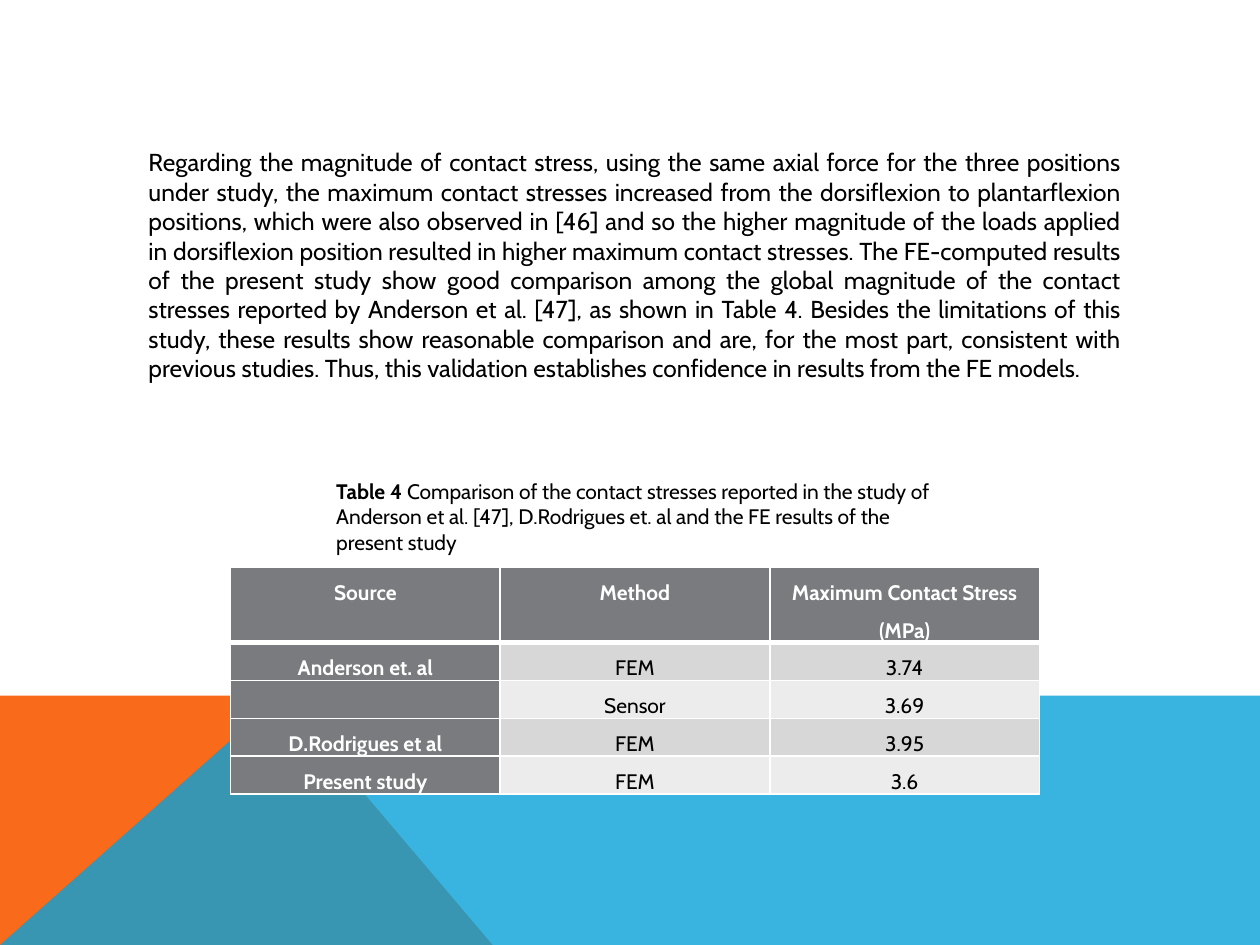
"""Build the contact stress comparison slide."""
import lxml.etree
import pptx
import pptx.dml.color
import pptx.enum.text
import pptx.oxml.ns
import pptx.util

Inches = pptx.util.Inches
Pt = pptx.util.Pt
qn = pptx.oxml.ns.qn
ALIGN = pptx.enum.text.PP_ALIGN

HUES = {"orange": "F96A1B", "blue": "08A1D9", "gray": "797B7E",
        "band": "D7D7D8", "pale": "ECECEC", "white": "FFFFFF", "black": "000000"}
BODY = (
    "Regarding the magnitude of contact stress, using the same axial force for the three "
    "positions under study, the maximum contact stresses increased from the dorsiflexion to "
    "plantarflexion positions, which were also observed in [46] and so the higher magnitude "
    "of the loads applied in dorsiflexion position resulted in higher maximum contact "
    "stresses. The FE-computed results of the present study show good comparison among the "
    "global magnitude of the contact stresses reported by Anderson et al. [47], as shown in "
    "Table 4. Besides the limitations of this study, these results show reasonable comparison "
    "and are, for the most part, consistent with previous studies. Thus, this validation "
    "establishes confidence in results from the FE models."
)
LABEL = "Table 4 "
NOTE = ("Comparison of the contact stresses reported in the study of Anderson et al. [47], "
        "D.Rodrigues et. al and the FE results of the present study")
ROWS = [
    ("Source", "Method", "Maximum Contact Stress (MPa)"),
    ("Anderson et. al", "FEM", "3.74"),
    ("", "Sensor", "3.69"),
    ("D.Rodrigues et al", "FEM", "3.95"),
    ("Present study", "FEM", "3.6"),
]
WEDGES = [
    ("orange", 100, [(0, 7.5), (0, 5.52), (2.23, 5.52), (3.91, 7.5)]),
    ("blue", 80, [(0, 7.5), (2.23, 5.52), (10, 5.52), (10, 7.5)]),
]
COL, HEAD, ROW = 2.14, 0.6, 0.3


def paint(fill, hue):
    fill.solid()
    fill.fore_color.rgb = pptx.dml.color.RGBColor.from_string(HUES[hue])


def write(para, text, size=12, hue="black", bold=False, align=ALIGN.LEFT):
    para.alignment = align
    if not text:
        lxml.etree.SubElement(para._p, qn("a:endParaRPr"), sz=str(size * 100))
        return
    run = para.add_run()
    run.text = text
    run.font.name = "Cabin"
    run.font.size = Pt(size)
    run.font.bold = bold
    paint(run.font.fill, hue)


def add_box(slide, *place):
    frame = slide.shapes.add_textbox(*map(Inches, place)).text_frame
    frame.word_wrap = True
    return frame.paragraphs[0]


def add_wedge(slide, hue, alpha, points):
    spots = [(Inches(x), Inches(y)) for x, y in points]
    pen = slide.shapes.build_freeform(*spots[0])
    pen.add_line_segments(spots[1:], close=True)
    shape = pen.convert_to_shape()
    shape.shadow.inherit = False
    shape.line.fill.background()
    paint(shape.fill, hue)
    if alpha < 100:
        tone = shape._element.spPr.find(".//" + qn("a:srgbClr"))
        lxml.etree.SubElement(tone, qn("a:alpha"), val=str(alpha * 1000))


def add_edges(cell, wide):
    props = cell._tc.get_or_add_tcPr()
    for side in "LRTB":
        width = wide.get(side, 1)
        line = lxml.etree.SubElement(props, qn("a:ln" + side), w=str(Pt(width)))
        fill = lxml.etree.SubElement(line, qn("a:solidFill"))
        lxml.etree.SubElement(fill, qn("a:srgbClr"), val=HUES["white"])


def add_grid(slide):
    high = HEAD + ROW * (len(ROWS) - 1)
    table = slide.shapes.add_table(
        len(ROWS), len(ROWS[0]), Inches(1.83), Inches(4.5),
        Inches(COL * len(ROWS[0])), Inches(high)).table
    for col in table.columns:
        col.width = Inches(COL)
    for r, texts in enumerate(ROWS):
        table.rows[r].height = Inches(ROW if r else HEAD)
        for c, text in enumerate(texts):
            cell = table.cell(r, c)
            key = r == 0 or c == 0
            cell.margin_left = cell.margin_right = Inches(0.07)
            cell.margin_top = cell.margin_bottom = 0
            add_edges(cell, {0: {"B": 3}, 1: {"T": 3}}.get(r, {}))
            paint(cell.fill, "gray" if key else "band" if r % 2 else "pale")
            para = cell.text_frame.paragraphs[0]
            para.line_spacing = 1.5
            para.space_after = Pt(10)
            write(para, text, hue="white" if key else "black", bold=key,
                  align=ALIGN.CENTER)


def main():
    deck = pptx.Presentation()
    deck.slide_width, deck.slide_height = Inches(10), Inches(7.5)
    slide = deck.slides.add_slide(deck.slide_layouts[6])
    for wedge in WEDGES:
        add_wedge(slide, *wedge)
    write(add_box(slide, 1.08, 1.12, 7.92, 1.99), BODY, size=14, align=ALIGN.JUSTIFY)
    add_grid(slide)
    note = add_box(slide, 2.57, 3.75, 5, 0.71)
    write(note, LABEL, bold=True)
    write(note, NOTE)
    deck.save("out.pptx")


if __name__ == "__main__":
    main()
